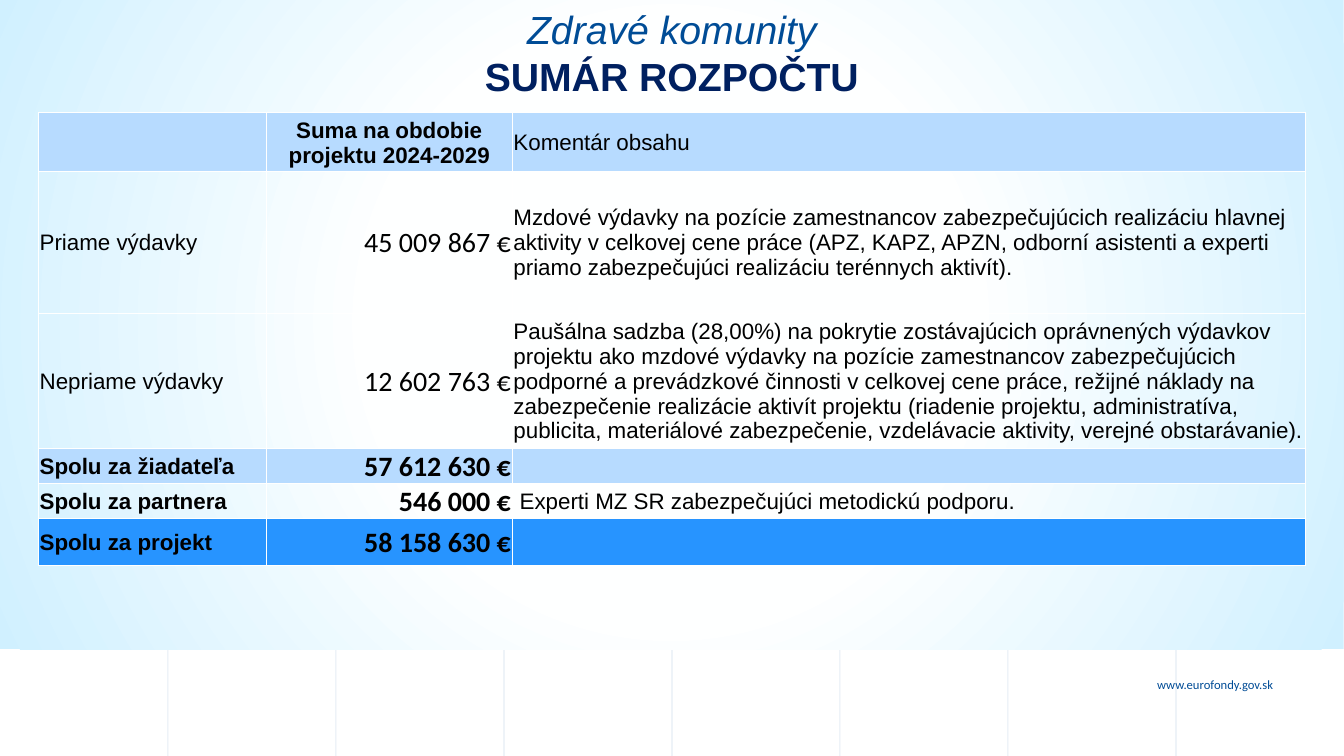
from lxml.etree import SubElement
from pptx import Presentation
from pptx.dml.color import RGBColor
from pptx.enum.shapes import MSO_CONNECTOR, MSO_SHAPE
from pptx.enum.text import MSO_ANCHOR, PP_ALIGN
from pptx.oxml import parse_xml
from pptx.oxml.ns import nsdecls, qn
from pptx.util import Cm, Pt

WIDTH, HEIGHT = 33.87, 19.05
STRIPES = 8
BLUE, NAVY, BLACK, WHITE = "004C96", "002060", "000000", "FFFFFF"
PALE, STRONG = "B7DBFF", "2794FF"
COLUMN_WIDTHS = [5.74, 6.2, 19.99]
BUDGET = [
    (1.49, PALE, False, "", "Suma na obdobie projektu 2024-2029", "Komentár obsahu"),
    (3.56, None, False, "Priame výdavky", "45 009 867 €",
     "Mzdové výdavky na pozície zamestnancov zabezpečujúcich realizáciu hlavnej "
     "aktivity v celkovej cene práce (APZ, KAPZ, APZN, odborní asistenti a experti "
     "priamo zabezpečujúci realizáciu terénnych aktivít)."),
    (3.4, None, False, "Nepriame výdavky", "12 602 763 €",
     "Paušálna sadzba (28,00%) na pokrytie zostávajúcich oprávnených výdavkov "
     "projektu ako mzdové výdavky na pozície zamestnancov zabezpečujúcich "
     "podporné a prevádzkové činnosti v celkovej cene práce, režijné náklady na "
     "zabezpečenie realizácie aktivít projektu (riadenie projektu, administratíva, "
     "publicita, materiálové zabezpečenie, vzdelávacie aktivity, verejné obstarávanie)."),
    (0.76, PALE, True, "Spolu za žiadateľa", "57 612 630 €", ""),
    (0.76, None, True, "Spolu za partnera", "546 000 €",
     " Experti MZ SR zabezpečujúci metodickú podporu."),
    (1.19, STRONG, True, "Spolu za projekt", "58 158 630 €", ""),
]


def color(value):
    """Turn a hex string into a colour."""
    return RGBColor.from_string(value)


def set_opacity(fill_owner, percent):
    """Make the solid fill below an element partly transparent."""
    tone = next(fill_owner.iter(qn("a:srgbClr")))
    SubElement(tone, qn("a:alpha")).set("val", str(percent * 1000))


def add_span(para, text, size, tone, font="Arial", bold=False, italic=False):
    """Append one formatted run to a paragraph."""
    span = para.add_run()
    span.text = text
    span.font.name = font
    span.font.size = Pt(size)
    span.font.bold = bold
    span.font.italic = italic
    span.font.color.rgb = color(tone)


def add_panel(page, left, top, width, height):
    """Add a rectangle without outline or shadow."""
    panel = page.shapes.add_shape(
        MSO_SHAPE.RECTANGLE, Cm(left), Cm(top), Cm(width), Cm(height))
    panel.shadow.inherit = False
    panel.line.fill.background()
    return panel


def add_text(page, left, top, width, height):
    """Add a wrapping text box and return its frame."""
    box = page.shapes.add_textbox(Cm(left), Cm(top), Cm(width), Cm(height))
    box.text_frame.word_wrap = True
    return box.text_frame


def draw_stripes(page, left, top, width, height):
    """Divide the box into equal stripes with faint separators."""
    step = width / STRIPES
    for number in range(1, STRIPES):
        edge = Cm(left + number * step)
        line = page.shapes.add_connector(
            MSO_CONNECTOR.STRAIGHT, edge, Cm(top), edge, Cm(top + height))
        line.line.width = Pt(0.75)
        line.line.color.rgb = color(BLUE)
        properties = line._element.spPr
        set_opacity(properties, 10)
        SubElement(properties, qn("a:effectLst"))
    for number in range(STRIPES):
        stripe = add_panel(page, left + number * step, top, step, height)
        stripe.fill.solid()
        stripe.fill.fore_color.rgb = color(WHITE)
        set_opacity(stripe._element.spPr, 4)


def draw_glow(page, left, top, width, height):
    """Fill the box with a circular gradient from white to light blue."""
    glow = add_panel(page, left, top, width, height)
    stops = "".join(
        f'<a:gs pos="{place * 1000}"><a:srgbClr val="{tone}"/></a:gs>'
        for place, tone in [(0, "FEFFFF"), (40, "FEFFFF"), (100, "D0F0FF")])
    gradient = parse_xml(
        f'<a:gradFill {nsdecls("a")} rotWithShape="1"><a:gsLst>{stops}</a:gsLst>'
        '<a:path path="circle"><a:fillToRect l="50000" t="50000" r="50000" '
        'b="50000"/></a:path></a:gradFill>')
    glow._element.spPr.find(qn("a:prstGeom")).addnext(gradient)


def draw_title(page, left, top, width, height):
    """Write the programme name above the slide heading."""
    frame = add_text(page, left, top, width, height)
    name = frame.paragraphs[0]
    heading = frame.add_paragraph()
    name.alignment = heading.alignment = PP_ALIGN.CENTER
    add_span(name, "Zdravé komunity", 28, BLUE, italic=True)
    add_span(heading, "SUMÁR ROZPOČTU", 28, NAVY, bold=True)


def draw_footer(page, left, top, width, height):
    """Write the web address at the right of the box."""
    para = add_text(page, left, top, width, height).paragraphs[0]
    para.alignment = PP_ALIGN.RIGHT
    add_span(para, "www.eurofondy.gov.sk", 9, BLUE, "Calibri")


def fill_cell(cell, text, fill, align, size, font, bold):
    """Set the fill, margins and text of one table cell."""
    if fill:
        cell.fill.solid()
        cell.fill.fore_color.rgb = color(fill)
    else:
        cell.fill.background()
    cell.margin_left = cell.margin_right = cell.margin_top = Cm(0.03)
    cell.margin_bottom = 0
    cell.vertical_anchor = MSO_ANCHOR.MIDDLE
    para = cell.text_frame.paragraphs[0]
    para.alignment = align
    if text:
        add_span(para, text, size, BLACK, font, bold)
    else:
        para.font.size = Pt(size)


def draw_budget(page, left, top):
    """Build the budget table from its top left corner."""
    height = sum(row[0] for row in BUDGET)
    frame = page.shapes.add_table(
        len(BUDGET), len(COLUMN_WIDTHS), Cm(left), Cm(top),
        Cm(sum(COLUMN_WIDTHS)), Cm(height))
    table = frame.table
    table.first_row = table.horz_banding = False
    for column, width in zip(table.columns, COLUMN_WIDTHS):
        column.width = Cm(width)
    for index, (row_height, fill, total, label, amount, comment) in enumerate(BUDGET):
        row = table.rows[index]
        row.height = Cm(row_height)
        name_cell, amount_cell, comment_cell = row.cells
        fill_cell(name_cell, label, fill, PP_ALIGN.LEFT, 16, "Arial", total)
        if index == 0:
            fill_cell(amount_cell, amount, fill, PP_ALIGN.CENTER, 16, "Arial", True)
        else:
            fill_cell(amount_cell, amount, fill, PP_ALIGN.RIGHT, 20, "Calibri", total)
        fill_cell(comment_cell, comment, fill, PP_ALIGN.LEFT, 16, "Arial", False)


def main():
    """Build and save the budget slide."""
    deck = Presentation()
    deck.slide_width, deck.slide_height = Cm(WIDTH), Cm(HEIGHT)
    page = deck.slides.add_slide(deck.slide_layouts[6])
    draw_stripes(page, 0, 0, WIDTH, HEIGHT)
    draw_footer(page, 27.25, 16.92, 5.08, 0.64)
    draw_glow(page, -0.05, -0.1, 33.91, 16.46)
    draw_title(page, 2.54, 0, 28.78, 2.64)
    draw_budget(page, 0.97, 2.84)
    deck.save("out.pptx")


if __name__ == "__main__":
    main()
